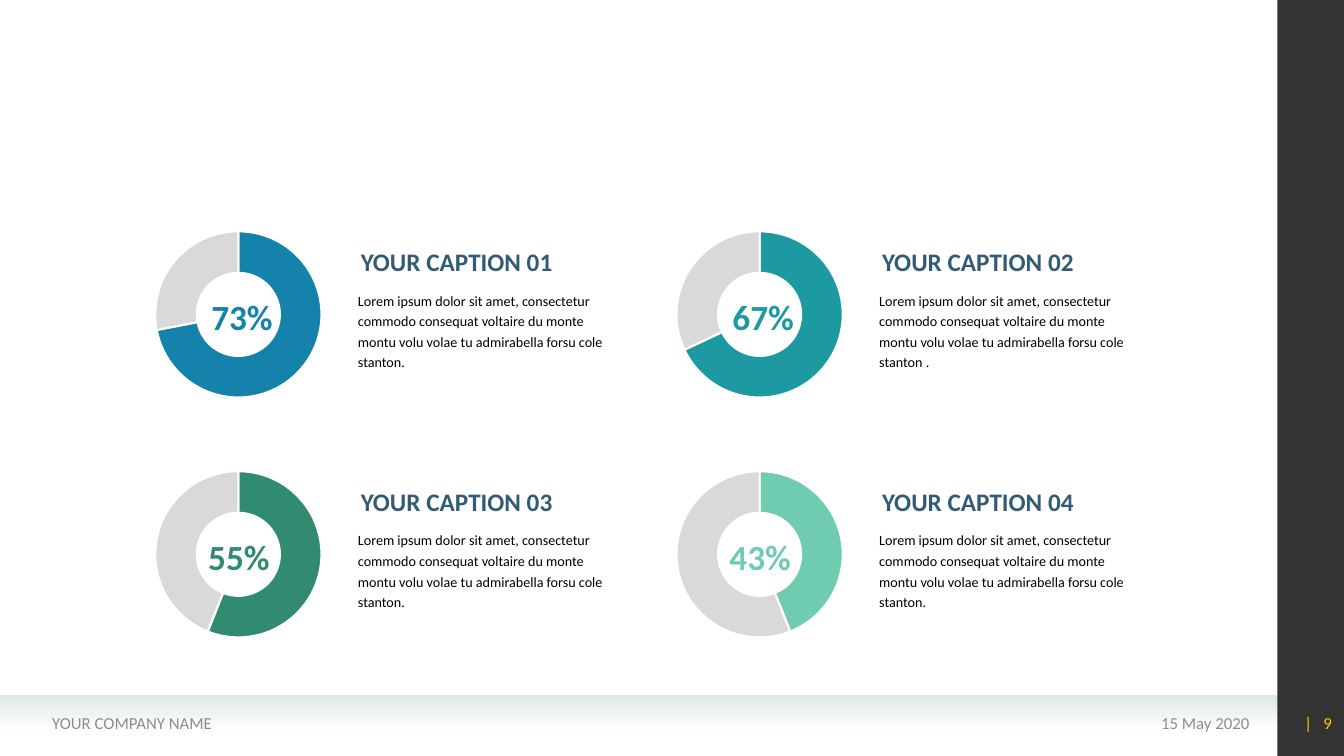
from lxml import etree
from pptx import Presentation
from pptx.chart.data import CategoryChartData
from pptx.dml.color import RGBColor
from pptx.enum.chart import XL_CHART_TYPE
from pptx.enum.shapes import MSO_SHAPE
from pptx.enum.text import MSO_ANCHOR, MSO_AUTO_SIZE, PP_ALIGN
from pptx.oxml import parse_xml
from pptx.oxml.ns import nsdecls, qn
from pptx.util import Emu, Pt

DOUGHNUT = XL_CHART_TYPE.DOUGHNUT
RECTANGLE = MSO_SHAPE.RECTANGLE
LEFT, CENTER, RIGHT = PP_ALIGN.LEFT, PP_ALIGN.CENTER, PP_ALIGN.RIGHT
TOP, MIDDLE, BOTTOM = MSO_ANCHOR.TOP, MSO_ANCHOR.MIDDLE, MSO_ANCHOR.BOTTOM
GROW, FIXED = MSO_AUTO_SIZE.SHAPE_TO_FIT_TEXT, MSO_AUTO_SIZE.NONE

EMU_PER_PX = 9144  # 100 px to the inch
COLORS = {
    "blue": "1482AB", "teal": "1D9AA1", "green": "318B71", "mint": "70CCB1",
    "rest": "D9D9D9", "caption": "335B74", "body": "000000", "footer": "8C8C8C",
    "page": "FFCC00", "band": "D9E9E8", "sidebar": "000000", "white": "FFFFFF",
}
BODY = ("Lorem ipsum dolor sit amet, consectetur commodo consequat voltaire "
        "du monte montu volu volae tu admirabella forsu cole stanton")
# caption, percentage label, share drawn, colour, end of body text
CARDS = [
    ("YOUR CAPTION 01", "73%", 72, "blue", "."),
    ("YOUR CAPTION 02", "67%", 68, "teal", " ."),
    ("YOUR CAPTION 03", "55%", 56, "green", "."),
    ("YOUR CAPTION 04", "43%", 44, "mint", "."),
]
CARD_LEFT, CARD_TOP, COLUMN_STEP, ROW_STEP = 138, 214, 517, 238
PERCENT_LEFT = (61, 58)  # by row


def px(*lengths):
    return [Emu(length * EMU_PER_PX) for length in lengths]


def rgb(color):
    return RGBColor.from_string(COLORS[color])


def set_alpha(color_element, percent):
    etree.SubElement(color_element, qn("a:alpha")).set("val", str(percent * 1000))


class SlideBuilder:
    """Holds the font and the current slide, and adds elements to it."""

    def __init__(self, slide, font="Calibri"):
        self.slide = slide
        self.font = font

    def rectangle(self, box, color, alpha=100, fade=False):
        """Add a plain rectangle, or one that fades out towards its bottom."""
        shape = self.slide.shapes.add_shape(RECTANGLE, *px(*box))
        shape.shadow.inherit = False
        shape.line.fill.background()
        if fade:
            shape.fill.gradient()
            shape.fill.gradient_angle = 270
            for stop in shape.fill.gradient_stops:
                stop.color.rgb = rgb(color)
        else:
            shape.fill.solid()
            shape.fill.fore_color.rgb = rgb(color)
        last_color = list(shape._element.spPr.iter(qn("a:srgbClr")))[-1]
        set_alpha(last_color, 0 if fade else alpha)

    def text(self, box, words, *, size, color, bold=False, align=LEFT, anchor=TOP,
             wrap=True, grow=False, insets=(10, 5), line_pt=None, before_pt=None,
             tracking=None):
        """Add a text box; tracking is in hundredths of a point."""
        frame = self.slide.shapes.add_textbox(*px(*box)).text_frame
        frame.word_wrap = wrap
        frame.auto_size = GROW if grow else FIXED
        frame.vertical_anchor = anchor
        frame.margin_left, frame.margin_top = px(*insets)
        frame.margin_right, frame.margin_bottom = px(*insets)
        paragraph = frame.paragraphs[0]
        paragraph.alignment = align
        if line_pt:
            paragraph.line_spacing = Pt(line_pt)
        if before_pt:
            paragraph.space_before = Pt(before_pt)
        run = paragraph.add_run()
        run.text = words
        run.font.name = self.font
        run.font.size = Pt(size)
        run.font.bold = bold
        run.font.color.rgb = rgb(color)
        if tracking:
            run.font._element.set("spc", str(tracking))

    def doughnut(self, box, share, color):
        data = CategoryChartData()
        data.categories = ["1", "2"]
        data.add_series("Series 1", (share, 100 - share))
        chart = self.slide.shapes.add_chart(DOUGHNUT, *px(*box), data).chart
        chart.has_title = False
        chart.has_legend = False
        chart.font.name = self.font
        chart.font.size = Pt(10)
        chart.font.color.rgb = rgb("body")
        plot = chart.plots[0]
        plot.vary_by_categories = True
        for index, slice_color in enumerate((color, "rest")):
            part = plot.series[0].points[index].format
            part.fill.solid()
            part.fill.fore_color.rgb = rgb(slice_color)
            part.line.color.rgb = rgb("white")
            part.line.width = Pt(1.5)
        plot_area = chart._chartSpace.chart.plotArea
        plot_area.find(".//" + qn("c:holeSize")).set("val", "70")
        for layout in plot_area.findall(qn("c:layout")):
            plot_area.remove(layout)
        plot_area.insert(0, parse_xml(
            f'<c:layout {nsdecls("c")}><c:manualLayout>'
            '<c:layoutTarget val="inner"/><c:xMode val="edge"/><c:yMode val="edge"/>'
            '<c:x val="0.08"/><c:y val="0.08"/><c:w val="0.85"/><c:h val="0.85"/>'
            '</c:manualLayout></c:layout>'))

    def card(self, left, top, percent_left, card):
        caption, percent, share, color, ending = card
        self.doughnut((left, top, 195, 194), share, color)
        self.text((left + 210, top + 25, 218, 40), caption, size=18, color="caption",
                  bold=True, anchor=BOTTOM, wrap=False, grow=True)
        self.text((left + 213, top + 70, 251, 86), BODY + ending, size=10.1,
                  color="body", grow=True, insets=(4, 2), line_pt=14.7, before_pt=2)
        self.text((left + percent_left, top + 74, 82, 52), percent, size=25.2,
                  color=color, bold=True, align=CENTER, anchor=MIDDLE,
                  wrap=False, grow=True)


def main():
    presentation = Presentation()
    presentation.slide_width, presentation.slide_height = px(1333, 750)
    slide = presentation.slides.add_slide(presentation.slide_layouts[6])
    builder = SlideBuilder(slide)

    builder.rectangle((0, 690, 1267, 31), "band", fade=True)
    builder.rectangle((1267, 0, 67, 750), "sidebar", alpha=80)
    footer = {"size": 12, "anchor": MIDDLE}
    builder.text((910, 697, 339, 40), "15 May 2020", color="footer", align=RIGHT, **footer)
    builder.text((42, 697, 490, 40), "YOUR COMPANY NAME", color="footer", **footer)
    builder.text((1264, 697, 67, 40), "| 9", color="page", align=RIGHT,
                 tracking=270, **footer)

    for index, card in enumerate(CARDS):
        row, column = divmod(index, 2)
        builder.card(CARD_LEFT + column * COLUMN_STEP, CARD_TOP + row * ROW_STEP,
                     PERCENT_LEFT[row], card)
    presentation.save("out.pptx")


if __name__ == "__main__":
    main()
